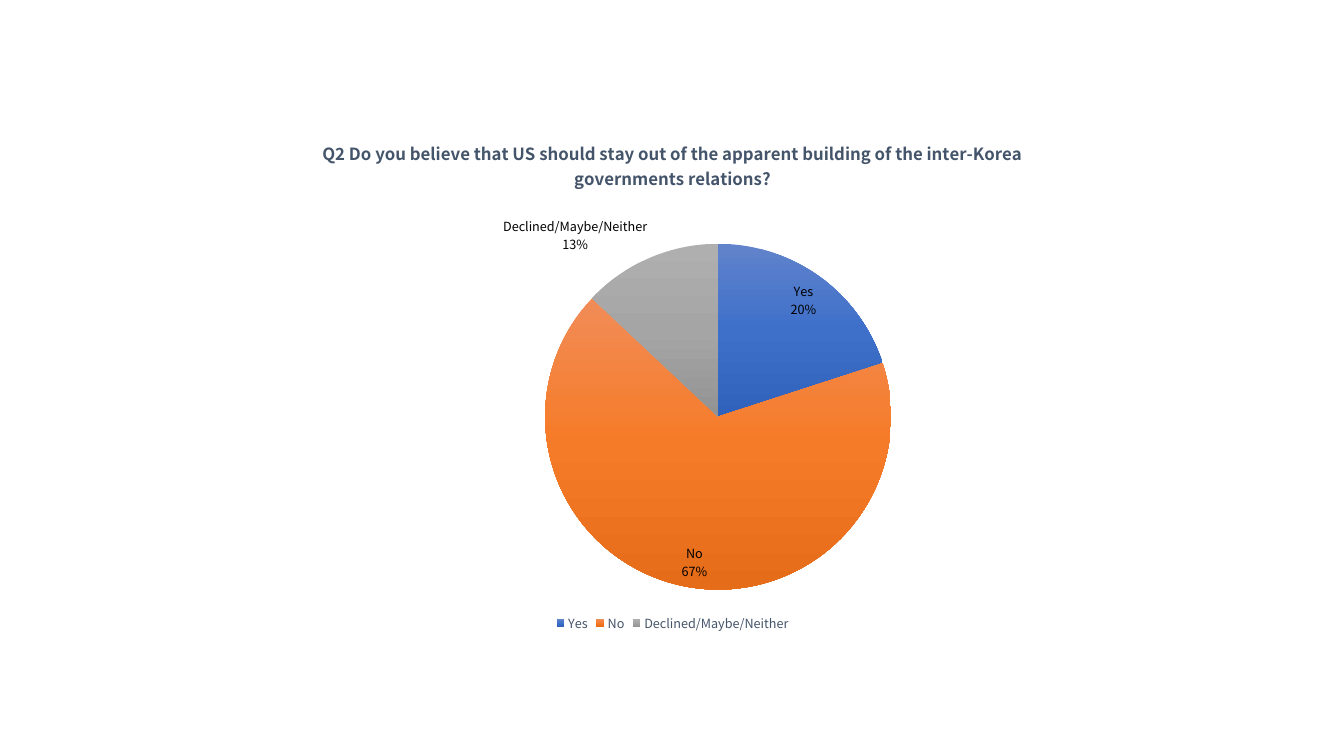
import copy
import lxml.etree
import pptx
import pptx.util
import pptx.dml.color
import pptx.chart.data
import pptx.enum.chart
import pptx.oxml.ns

FONT = "Noto Sans CJK KR"
QUESTION = ("Q2 Do you believe that US should stay out of the apparent "
            "building of the inter-Korea governments relations?")
# Answer, percent, gradient from top to bottom
ANSWERS = [
    ("Yes", 20, ("6183CB", "3E70CA", "3062BB")),
    ("No", 67, ("F18C57", "F67B28", "E56C19")),
    ("Declined/Maybe/Neither", 13, ("AFAFAF", "A5A5A5", "939393")),
]
qn = pptx.oxml.ns.qn
Place = pptx.enum.chart.XL_LABEL_POSITION


def color(code):
    return pptx.dml.color.RGBColor.from_string(code)


def style(font, size, code, bold=False):
    font.name, font.size, font.bold = FONT, pptx.util.Pt(size), bold
    font.color.rgb = color(code)


def shade(point, root, codes):
    """Fill a slice with an even vertical gradient."""
    fill = point.format.fill
    fill.gradient()
    fill.gradient_angle = 270
    stops = list(root.iter(qn("a:gsLst")))[-1]
    stops.append(copy.deepcopy(stops[-1]))
    for i, code in enumerate(codes):
        stop = fill.gradient_stops[i]
        stop.position = i / (len(codes) - 1)
        stop.color.rgb = color(code)
    point.format.line.fill.background()


def show(node):
    """Show category and percent on two lines."""
    for name, flag in (("showVal", "0"), ("showCatName", "1"),
                       ("showPercent", "1")):
        node.find(qn("c:" + name)).set("val", flag)
    gap = lxml.etree.Element(qn("c:separator"))
    gap.text = "\n"
    last = node.find(qn("c:showBubbleSize"))
    if last is None:
        last = node.find(qn("c:showPercent"))
    last.addnext(gap)


def label(series, root):
    """Label inside the rim, with the last slice outside."""
    labels = series.data_labels
    labels.number_format, labels.number_format_is_linked = "0%", False
    labels.position = Place.INSIDE_END
    style(labels.font, 9, "000000")
    outer = series.points[len(ANSWERS) - 1].data_label
    style(outer.font, 9, "000000")
    outer.position = Place.OUTSIDE_END
    show(root.find(".//" + qn("c:dLbls")))
    show(root.find(".//" + qn("c:dLbl")))


def settle(root, x, y, w, h):
    """Place the pie by shares of the chart box."""
    area = root.find(".//" + qn("c:plotArea"))
    old = area.find(qn("c:layout"))
    if old is not None:
        area.remove(old)
    layout = lxml.etree.Element(qn("c:layout"))
    manual = lxml.etree.SubElement(layout, qn("c:manualLayout"))
    parts = (("layoutTarget", "inner"), ("xMode", "edge"), ("yMode", "edge"),
             ("x", x), ("y", y), ("w", w), ("h", h))
    for name, value in parts:
        lxml.etree.SubElement(manual, qn("c:" + name)).set("val", str(value))
    area.insert(0, layout)


def pie(slide, left, top, width, height):
    data = pptx.chart.data.CategoryChartData()
    data.categories = [name for name, _, _ in ANSWERS]
    data.add_series(QUESTION, [share for _, share, _ in ANSWERS])
    chart = slide.shapes.add_chart(
        pptx.enum.chart.XL_CHART_TYPE.PIE, left, top, width, height, data).chart
    root = chart._chartSpace
    style(chart.font, 10, "000000")

    # Title
    chart.has_title = True
    text = chart.chart_title.text_frame
    text.text = QUESTION
    style(text.paragraphs[0].font, 12, "44546A", True)
    chart.chart_title.include_in_layout = False

    # Legend
    chart.has_legend = True
    legend = chart.legend
    legend.position = pptx.enum.chart.XL_LEGEND_POSITION.BOTTOM
    legend.include_in_layout = False
    style(legend.font, 9, "44546A")

    # Slices and labels
    plot = chart.plots[0]
    plot.vary_by_categories = True
    series = plot.series[0]
    for i, (_, _, codes) in enumerate(ANSWERS):
        shade(series.points[i], root, codes)
    label(series, root)
    settle(root, 0.36, 0.24, 0.38, 0.67)


def main():
    deck = pptx.Presentation()
    deck.slide_width = pptx.util.Inches(13.33)
    deck.slide_height = pptx.util.Inches(7.5)
    slide = deck.slides.add_slide(deck.slide_layouts[6])
    inch = pptx.util.Inches
    pie(slide, inch(2.14), inch(1.19), inch(9.06), inch(5.12))
    deck.save("out.pptx")


if __name__ == "__main__":
    main()
